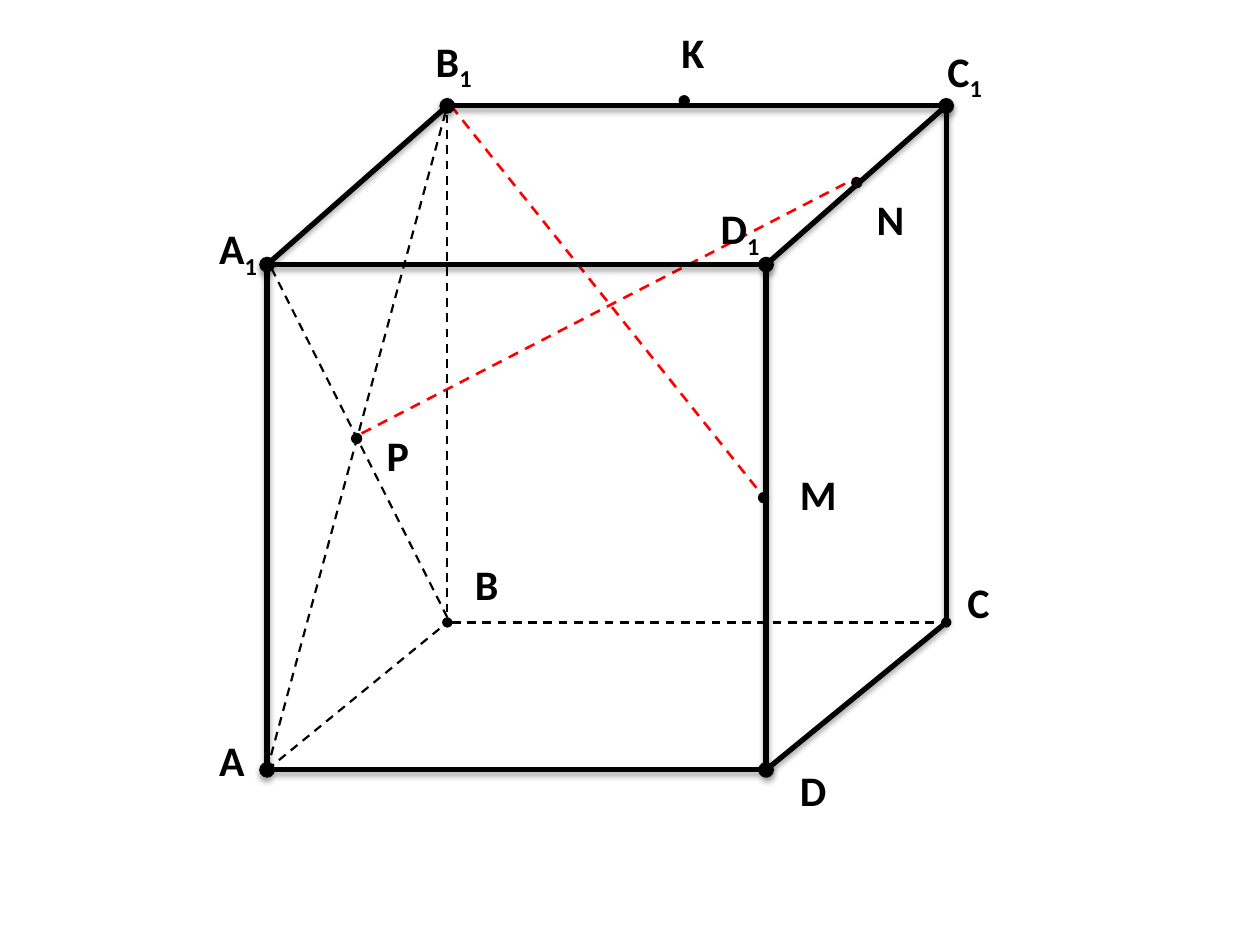
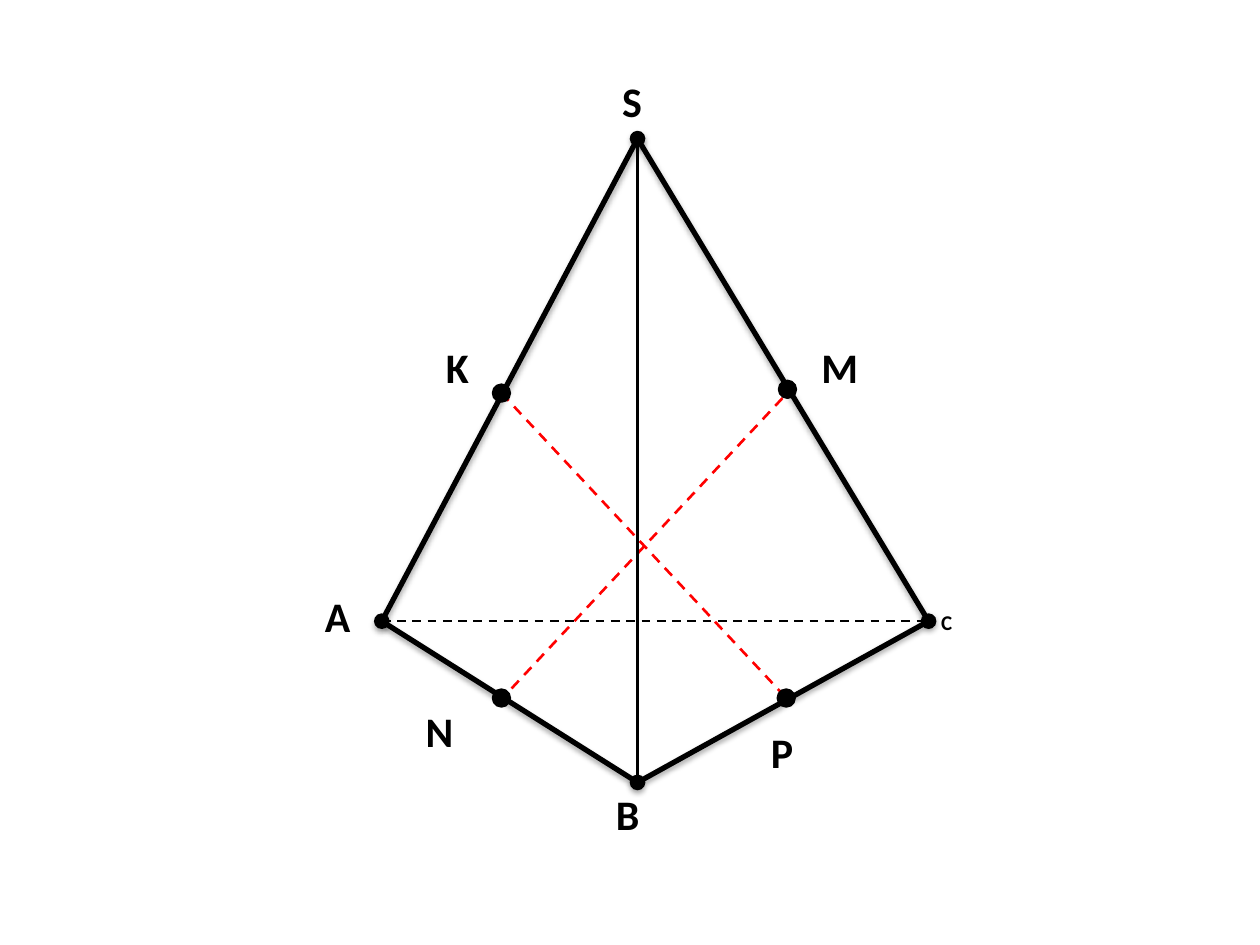
from lxml import etree
from pptx import Presentation
from pptx.dml.color import RGBColor
from pptx.enum import dml, shapes, text
from pptx.oxml.ns import qn
from pptx.util import Inches, Pt

BLACK = "000000"
RED = "FF0000"


def color(hex_string):
    return RGBColor.from_string(hex_string)


class Drawing:
    """Style of the geometric figures and the slide being drawn."""

    font = "Calibri"
    label_size = 24
    edge_width = 3
    thin_width = 1.25
    section_width = 1.5

    def __init__(self):
        self.presentation = Presentation()
        self.presentation.slide_width = Inches(10)
        self.presentation.slide_height = Inches(7.5)
        self.slide = None

    def new_slide(self):
        blank_layout = self.presentation.slide_layouts[6]
        self.slide = self.presentation.slides.add_slide(blank_layout)
        background = self.slide.background.fill
        background.solid()
        background.fore_color.rgb = color("FFFFFF")

    def line(self, start, end, width, line_color=BLACK, dashed=False,
             ovals=False, shadow=False):
        connector = self.slide.shapes.add_connector(
            shapes.MSO_CONNECTOR.STRAIGHT, *map(Inches, start + end))
        connector.line.width = Pt(width)
        connector.line.color.rgb = color(line_color)
        if dashed:
            connector.line.dash_style = dml.MSO_LINE.DASH
        properties = connector._element.spPr
        if ovals:
            outline = properties.find(qn("a:ln"))
            for tag in ("a:headEnd", "a:tailEnd"):
                etree.SubElement(outline, qn(tag), type="oval")
        effects = etree.SubElement(properties, qn("a:effectLst"))
        if shadow:
            outer = etree.SubElement(
                effects, qn("a:outerShdw"), blurRad="40000", dist="23000",
                dir="5400000", rotWithShape="0")
            shade = etree.SubElement(outer, qn("a:srgbClr"), val=BLACK)
            etree.SubElement(shade, qn("a:alpha"), val="35000")

    def edge(self, start, end, ovals=False):
        """Draw a visible edge, with vertex dots at both ends on request."""
        self.line(start, end, self.edge_width, ovals=ovals, shadow=True)

    def hidden_edge(self, start, end, ovals=False):
        self.line(start, end, self.thin_width, dashed=True, ovals=ovals)

    def section(self, start, end):
        """Draw a red dashed line between two marked points."""
        self.line(start, end, self.section_width, RED, dashed=True)

    def dot(self, center, diameter, outline):
        left, top = (value - diameter / 2 for value in center)
        shape = self.slide.shapes.add_shape(
            shapes.MSO_SHAPE.FLOWCHART_CONNECTOR, Inches(left), Inches(top),
            Inches(diameter), Inches(diameter))
        shape.shadow.inherit = False
        shape.fill.solid()
        shape.fill.fore_color.rgb = color(BLACK)
        shape.line.color.rgb = color(BLACK)
        shape.line.width = Pt(outline)

    def label(self, name, left, top, width, size=label_size, height=0.51):
        """Write a point's name; a digit after the letter is a subscript."""
        box = self.slide.shapes.add_textbox(
            Inches(left), Inches(top), Inches(width), Inches(height))
        frame = box.text_frame
        frame.word_wrap = True
        frame.auto_size = text.MSO_AUTO_SIZE.SHAPE_TO_FIT_TEXT
        for character in name:
            run = frame.paragraphs[0].add_run()
            run.text = character
            run.font.name = self.font
            run.font.size = Pt(size)
            run.font.bold = True
            run.font.color.rgb = color(BLACK)
            if character.isdigit():
                run.font._element.set("baseline", "-25000")


def draw_cube(drawing):
    drawing.new_slide()
    a, b, c, d = (2.12, 6.11), (3.55, 4.94), (7.51, 4.94), (6.08, 6.11)
    a1, b1, c1, d1 = (2.12, 2.1), (3.55, 0.84), (7.51, 0.84), (6.08, 2.1)

    drawing.section((3.58, 0.84), (6.09, 3.98))
    drawing.section((2.87, 3.44), (6.8, 1.41))

    for start, end in ((a, d), (a1, d1), (b1, c1)):
        drawing.edge(start, end, ovals=True)
    for start, end in ((a, a1), (d, d1), (a1, b1), (d, c), (d1, c1), (c, c1)):
        drawing.edge(start, end)
    drawing.hidden_edge(b, c, ovals=True)
    for start, end in ((a, b), ((3.55, 4.86), b1), (a, b1),
                       ((3.55, 4.9), (2.12, 2.06))):
        drawing.hidden_edge(start, end)

    for center in ((6.06, 3.95), (6.8, 1.45), (2.83, 3.48), (5.43, 0.8)):
        drawing.dot(center, 0.08, outline=0.75)

    for name, left, top in (
            ("A", 1.64, 5.78), ("P", 2.97, 3.36), ("C", 7.58, 4.53),
            ("B", 3.67, 4.38), ("D", 6.25, 6.02), ("M", 6.25, 3.67),
            ("N", 6.86, 1.49), ("K", 5.31, 0.16)):
        drawing.label(name, left, top, 0.41)
    for name, left, top, width in (
            ("B1", 3.36, 0.23, 0.78), ("A1", 1.64, 1.72, 0.59),
            ("D1", 5.62, 1.56, 0.55), ("C1", 7.42, 0.31, 0.54)):
        drawing.label(name, left, top, width)


def draw_pyramid(drawing):
    drawing.new_slide()
    s, a, b, c = (5.06, 1.1), (3.03, 4.93), (5.06, 6.21), (7.37, 4.93)

    drawing.section((6.21, 3.16), (3.98, 5.55))
    drawing.section((3.98, 3.12), (6.25, 5.55))

    drawing.edge(a, s, ovals=True)
    drawing.edge(s, c)
    drawing.hidden_edge(a, c)
    drawing.line(s, b, drawing.thin_width)
    drawing.edge(a, b)
    drawing.edge(b, c, ovals=True)

    for center in ((3.98, 3.12), (6.25, 3.09), (3.98, 5.54), (6.24, 5.54)):
        drawing.dot(center, 0.14, outline=1)

    for name, left, top, width in (
            ("A", 2.48, 4.64, 0.55), ("B", 4.79, 6.21, 0.68),
            ("P", 6.02, 5.72, 0.55), ("M", 6.42, 2.66, 0.55),
            ("N", 3.28, 5.55, 0.55), ("S", 4.84, 0.55, 0.54),
            ("K", 3.44, 2.66, 0.55)):
        drawing.label(name, left, top, width)
    drawing.label("C", 7.37, 4.79, 0.55, size=12, height=0.3)


def main():
    drawing = Drawing()
    draw_cube(drawing)
    draw_pyramid(drawing)
    drawing.presentation.save("out.pptx")


if __name__ == "__main__":
    main()
